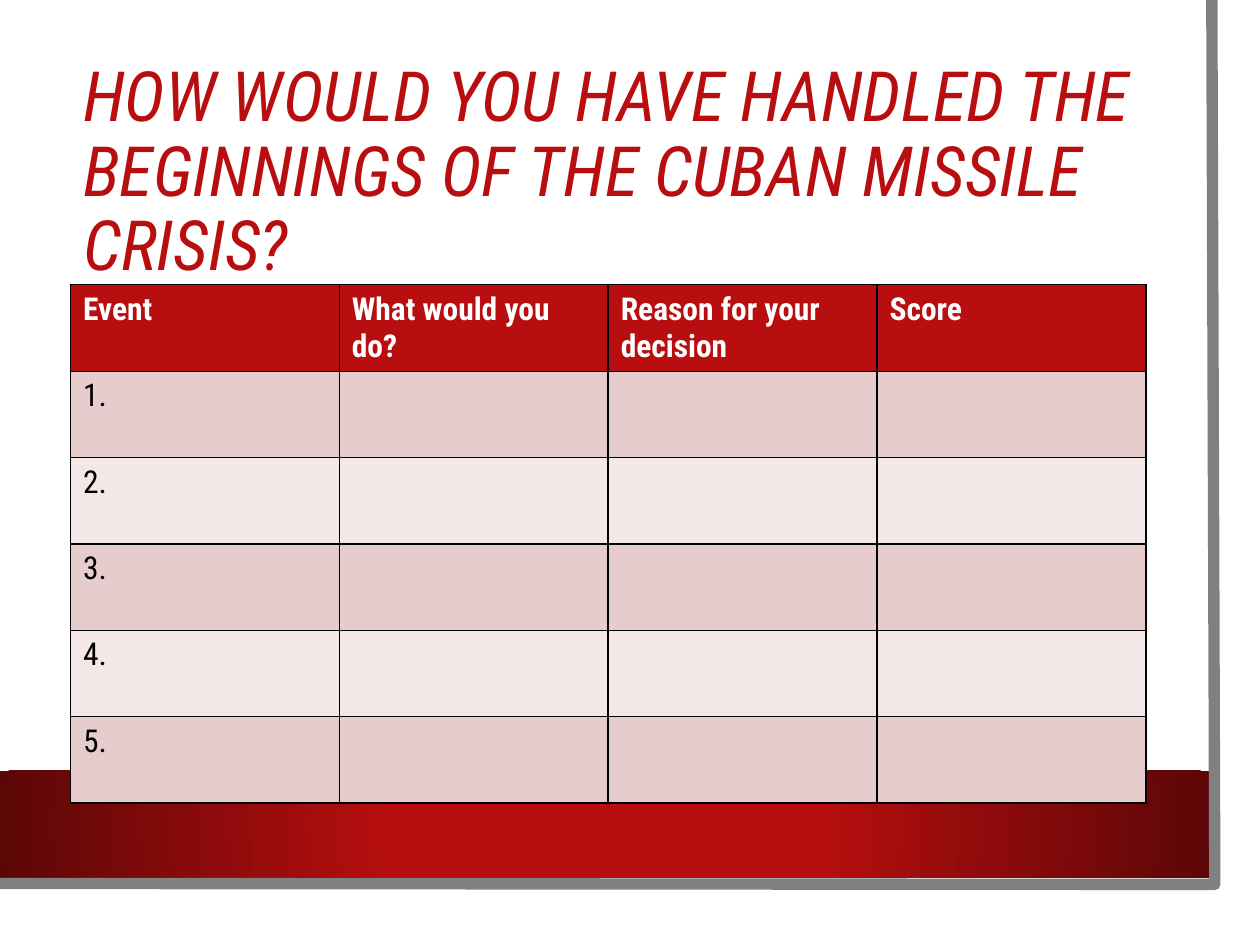
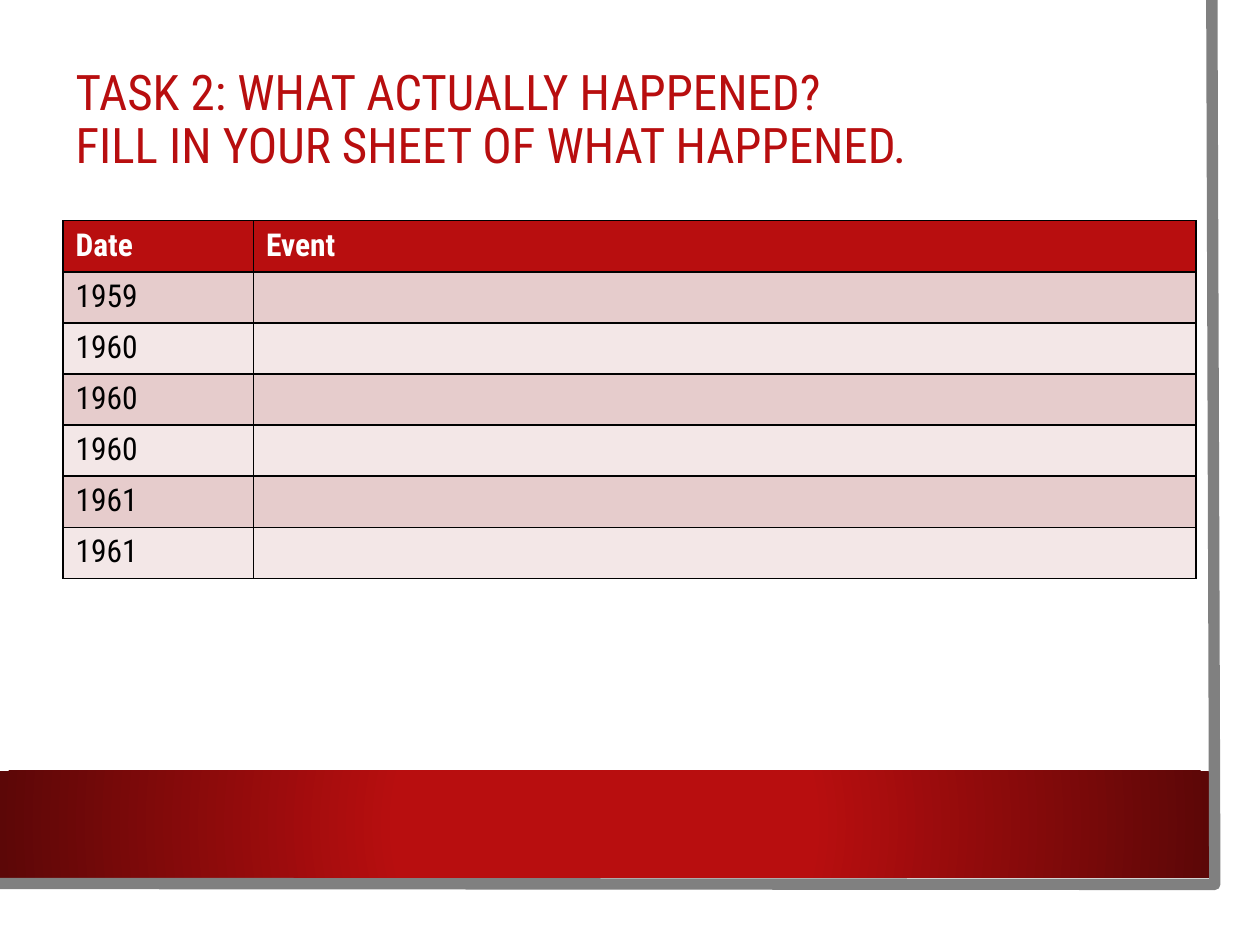
from dataclasses import dataclass

from lxml.etree import SubElement
from pptx import Presentation
from pptx.dml.color import RGBColor
from pptx.enum.shapes import MSO_SHAPE
from pptx.enum.text import MSO_ANCHOR, MSO_AUTO_SIZE, PP_ALIGN
from pptx.oxml.ns import qn
from pptx.util import Cm, Pt


@dataclass(frozen=True)
class Theme:
    font: str = "Roboto Condensed"
    red: RGBColor = RGBColor(0xB8, 0x0E, 0x0F)
    dark_red: RGBColor = RGBColor(0x5C, 0x07, 0x07)
    grey: RGBColor = RGBColor(0x80, 0x80, 0x80)
    white: RGBColor = RGBColor(0xFF, 0xFF, 0xFF)
    black: RGBColor = RGBColor(0, 0, 0)
    row_tints: tuple = (RGBColor(0xE6, 0xCC, 0xCC), RGBColor(0xF3, 0xE7, 0xE7))
    cell_size: float = 18
    frame_width: float = 6.5
    border_width: float = 1


THEME = Theme()

SLIDES = [
    {
        "title": ["HOW WOULD YOU HAVE HANDLED THE BEGINNINGS OF THE CUBAN MISSILE CRISIS?"],
        "title_box": (1.42, 1.9, 21.67, 3.2),
        "title_size": 39.6,
        "italic": True,
        "header": ["Event", "What would you do?", "Reason for your decision", "Score"],
        "first_column": ["1.", "2.", "3.", "4.", "5."],
        "table_corner": (1.42, 5.74),
        "column_widths": [5.42] * 4,
        "row_height": 1.74,
    },
    {
        "title": ["TASK 2: WHAT ACTUALLY HAPPENED?", "FILL IN YOUR SHEET OF WHAT HAPPENED."],
        "title_box": (1.27, 0.76, 22.86, 3.35),
        "title_size": 28,
        "italic": False,
        "header": ["Date", "Event"],
        "first_column": ["1959", "1960", "1960", "1960", "1961", "1961"],
        "table_corner": (1.27, 4.45),
        "column_widths": [3.84, 19],
        "row_height": 1.03,
    },
]


def add_run(paragraph, text, size, color, bold=False, italic=False):
    run = paragraph.add_run()
    run.text = text
    font = run.font
    font.name, font.size, font.color.rgb = THEME.font, Pt(size), color
    font.bold, font.italic = bold, italic


def add_band(shapes):
    band = shapes.add_shape(MSO_SHAPE.RECTANGLE, Cm(0), Cm(15.54), Cm(24.38), Cm(2.16))
    band.shadow.inherit = False
    band.line.fill.background()
    band.fill.gradient()
    stops = zip(band.fill.gradient_stops, ((0.34, THEME.red), (1, THEME.dark_red)))
    for stop, (position, color) in stops:
        stop.position, stop.color.rgb = position, color
    gradient = band.element.spPr.find(qn("a:gradFill"))
    gradient.remove(gradient.find(qn("a:lin")))
    circle = SubElement(gradient, qn("a:path"), path="circle")
    SubElement(circle, qn("a:fillToRect"), l="50000", t="50000", r="50000", b="50000")
    return band


def add_frame(shapes):
    outline = shapes.build_freeform(Cm(24.43), Cm(0))
    outline.add_line_segments([(Cm(24.49), Cm(17.83)), (Cm(-0.05), Cm(17.81))], close=False)
    frame = outline.convert_to_shape()
    frame.shadow.inherit = False
    frame.fill.background()
    frame.line.color.rgb = THEME.grey
    frame.line.width = Pt(THEME.frame_width)
    return frame


def move_to_layout(layout, parts):
    for offset, part in enumerate(parts):
        layout.shapes.element.insert(2 + offset, part.element)


def fill_title(title, content):
    title.left, title.top, title.width, title.height = map(Cm, content["title_box"])
    text = title.text_frame
    text.auto_size = MSO_AUTO_SIZE.NONE
    text.word_wrap = True
    text.vertical_anchor = MSO_ANCHOR.MIDDLE
    paragraph = text.paragraphs[0]
    paragraph.alignment = PP_ALIGN.LEFT
    paragraph.line_spacing = 0.9
    for number, line in enumerate(content["title"]):
        if number:
            paragraph.add_line_break()
        add_run(paragraph, line, content["title_size"], THEME.red, italic=content["italic"])


def add_borders(cell):
    properties = cell._tc.get_or_add_tcPr()
    for side in ("lnL", "lnR", "lnT", "lnB"):
        border = SubElement(properties, qn(f"a:{side}"), w=str(Pt(THEME.border_width)))
        fill = SubElement(border, qn("a:solidFill"))
        SubElement(fill, qn("a:srgbClr"), val=str(THEME.black))


def add_worksheet(shapes, content):
    widths = content["column_widths"]
    blanks = [""] * (len(widths) - 1)
    rows = [content["header"]] + [[label] + blanks for label in content["first_column"]]
    left, top = content["table_corner"]
    height = content["row_height"]
    table = shapes.add_table(len(rows), len(widths), Cm(left), Cm(top),
                             Cm(sum(widths)), Cm(height * len(rows))).table
    for column, width in zip(table.columns, widths):
        column.width = Cm(width)
    for r, labels in enumerate(rows):
        table.rows[r].height = Cm(height)
        is_header = r == 0
        for c, label in enumerate(labels):
            cell = table.cell(r, c)
            add_borders(cell)
            cell.fill.solid()
            cell.fill.fore_color.rgb = THEME.red if is_header else THEME.row_tints[(r - 1) % 2]
            if label:
                color = THEME.white if is_header else THEME.black
                add_run(cell.text_frame.paragraphs[0], label, THEME.cell_size, color, bold=is_header)


def main():
    deck = Presentation()
    deck.slide_width, deck.slide_height = Cm(25.4), Cm(19.05)
    title_only = deck.slide_layouts[5]
    for number, content in enumerate(SLIDES):
        slide = deck.slides.add_slide(title_only)
        if number == 0:
            move_to_layout(title_only, [add_band(slide.shapes), add_frame(slide.shapes)])
        fill_title(slide.shapes.title, content)
        add_worksheet(slide.shapes, content)
    deck.save("out.pptx")


if __name__ == "__main__":
    main()
